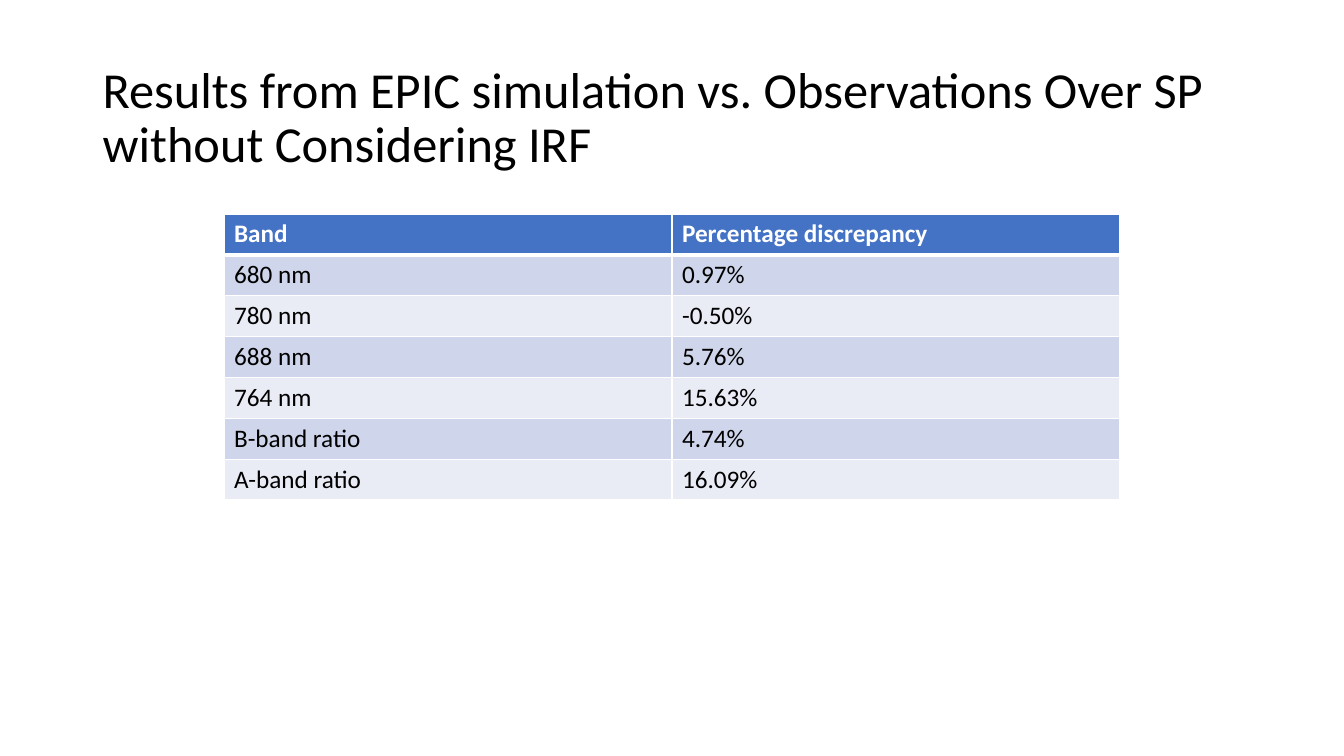
from dataclasses import dataclass

import lxml.etree
import pptx
import pptx.dml.color
import pptx.enum.text
import pptx.oxml.ns
import pptx.util

COLORS = {
    "ink": "000000",
    "paper": "FFFFFF",
    "header": "4472C4",
    "odd": "CFD5EA",
    "even": "E9EBF5",
}
FONT = "Calibri"
SLIDE_WIDTH = pptx.util.Inches(13.33)
SLIDE_HEIGHT = pptx.util.Inches(7.5)
ROW_HEIGHT = pptx.util.Pt(29.2)
THIN, THICK = 1, 3

TITLE = "Results from EPIC simulation vs. Observations Over SP\vwithout Considering IRF"


@dataclass(frozen=True)
class Result:
    band: str
    discrepancy: str


HEADER = Result("Band", "Percentage discrepancy")
RESULTS = [
    Result("680 nm", "0.97%"),
    Result("780 nm", "-0.50%"),
    Result("688 nm", "5.76%"),
    Result("764 nm", "15.63%"),
    Result("B-band ratio", "4.74%"),
    Result("A-band ratio", "16.09%"),
]


def rgb(name: str) -> pptx.dml.color.RGBColor:
    return pptx.dml.color.RGBColor.from_string(COLORS[name])


def across(share: float) -> int:
    return round(SLIDE_WIDTH * share)


def down(share: float) -> int:
    return round(SLIDE_HEIGHT * share)


def format_runs(paragraph, size: float, color: str, bold: bool = False) -> None:
    for run in paragraph.runs:
        run.font.name = FONT
        run.font.size = pptx.util.Pt(size)
        run.font.bold = bold
        run.font.color.rgb = rgb(color)


def add_title(slide) -> None:
    title = slide.shapes.add_textbox(across(0.069), down(0.061), across(0.983), down(0.193))
    frame = title.text_frame
    frame.word_wrap = True
    frame.vertical_anchor = pptx.enum.text.MSO_ANCHOR.MIDDLE
    frame.text = TITLE
    heading = frame.paragraphs[0]
    heading.line_spacing = 0.9
    format_runs(heading, 36, "ink")


def add_borders(cell, top: int, bottom: int) -> None:
    """Draw white cell edges; top and bottom widths are in points."""
    properties = cell._tc.get_or_add_tcPr()
    for edge, width in {"L": THIN, "R": THIN, "T": top, "B": bottom}.items():
        line = lxml.etree.SubElement(
            properties, pptx.oxml.ns.qn(f"a:ln{edge}"), w=str(pptx.util.Pt(width)))
        fill = lxml.etree.SubElement(line, pptx.oxml.ns.qn("a:solidFill"))
        lxml.etree.SubElement(fill, pptx.oxml.ns.qn("a:srgbClr"), val=COLORS["paper"])


def add_results(slide) -> None:
    rows = [HEADER, *RESULTS]
    table = slide.shapes.add_table(
        len(rows), 2, across(1 / 6), down(0.283), across(2 / 3), ROW_HEIGHT * len(rows)).table
    for index, result in enumerate(rows):
        is_header = index == 0
        band_fill = "header" if is_header else "odd" if index % 2 else "even"
        for column, text in enumerate((result.band, result.discrepancy)):
            cell = table.cell(index, column)
            cell.text_frame.text = text
            format_runs(cell.text_frame.paragraphs[0], 18,
                        "paper" if is_header else "ink", is_header)
            add_borders(cell, top=THICK if index == 1 else THIN,
                        bottom=THICK if is_header else THIN)
            cell.fill.solid()
            cell.fill.fore_color.rgb = rgb(band_fill)


def main() -> None:
    deck = pptx.Presentation()
    deck.slide_width, deck.slide_height = SLIDE_WIDTH, SLIDE_HEIGHT
    slide = deck.slides.add_slide(deck.slide_layouts[6])
    add_title(slide)
    add_results(slide)
    deck.save("out.pptx")


if __name__ == "__main__":
    main()
